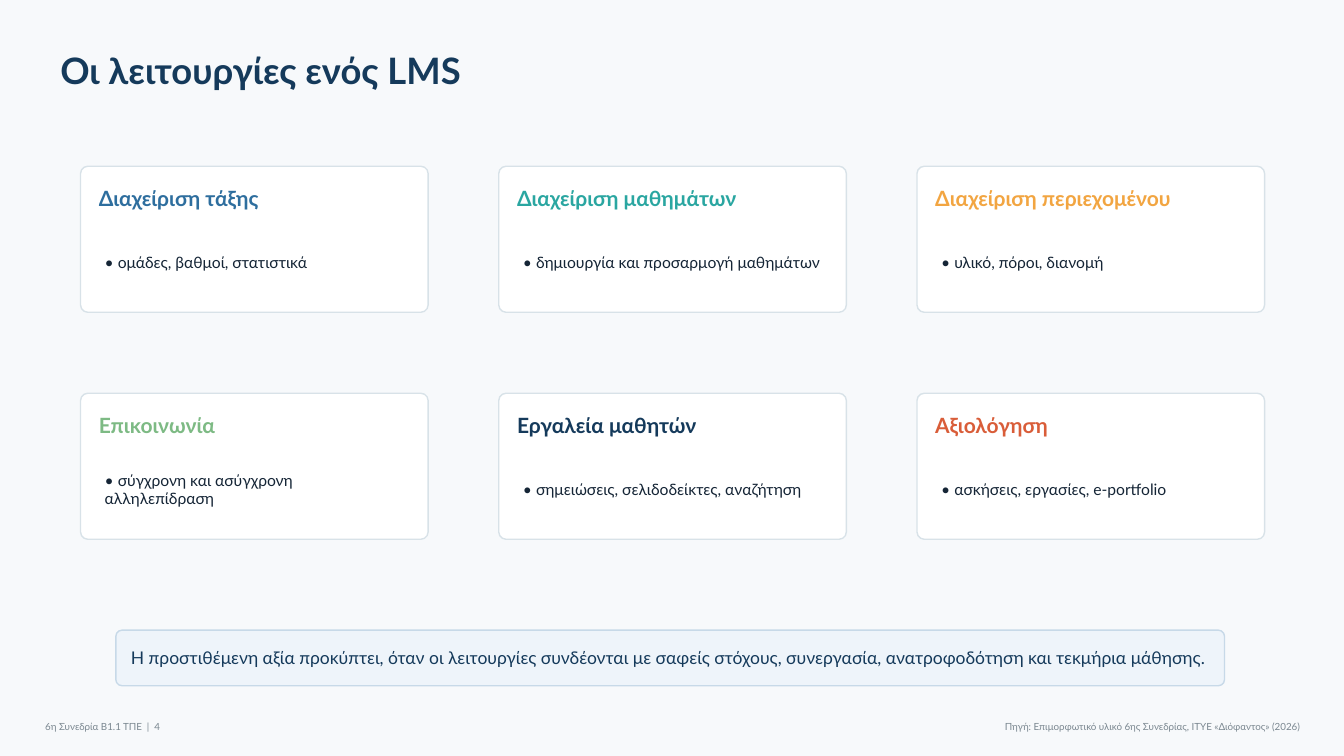
from pptx import Presentation
from pptx.dml.color import RGBColor
from pptx.enum import shapes, text
from pptx.util import Cm, Pt

NAVY, INK, GREY = "153A5B", "152536", "7A8790"
CARDS = [
    ("Διαχείριση τάξης", "2E6E9E", "ομάδες, βαθμοί, στατιστικά"),
    ("Διαχείριση μαθημάτων", "2AA6A1", "δημιουργία και προσαρμογή μαθημάτων"),
    ("Διαχείριση περιεχομένου", "F2A541", "υλικό, πόροι, διανομή"),
    ("Επικοινωνία", "7DBA84", "σύγχρονη και ασύγχρονη αλληλεπίδραση"),
    ("Εργαλεία μαθητών", NAVY, "σημειώσεις, σελιδοδείκτες, αναζήτηση"),
    ("Αξιολόγηση", "D95D39", "ασκήσεις, εργασίες, e-portfolio"),
]
COLUMNS = 3
CARD_LEFT, CARD_TOP = 2.03, 4.19
CARD_WIDTH, CARD_HEIGHT = 8.76, 3.68
COLUMN_STEP, ROW_STEP = 10.54, 5.72
FOOTER_TOP, FOOTER_HEIGHT = 18.08, 0.46

presentation = Presentation()
presentation.slide_width, presentation.slide_height = Cm(33.87), Cm(19.05)
slide = presentation.slides.add_slide(presentation.slide_layouts[6])
slide.background.fill.solid()
slide.background.fill.fore_color.rgb = RGBColor.from_string("F7F9FB")


def add_panel(left, top, width, height, rounding, fill, line):
    shape = slide.shapes.add_shape(
        shapes.MSO_SHAPE.ROUNDED_RECTANGLE, Cm(left), Cm(top), Cm(width), Cm(height))
    shape.adjustments[0] = rounding
    shape.shadow.inherit = False
    shape.fill.solid()
    shape.fill.fore_color.rgb = RGBColor.from_string(fill)
    shape.line.color.rgb = RGBColor.from_string(line)
    shape.line.width = Pt(1)


def add_text(left, top, width, height, words, size, color, bold=False,
             align=text.PP_ALIGN.LEFT):
    frame = slide.shapes.add_textbox(Cm(left), Cm(top), Cm(width), Cm(height)).text_frame
    frame.word_wrap = True
    frame.vertical_anchor = text.MSO_ANCHOR.MIDDLE
    frame.margin_left = frame.margin_right = frame.margin_top = frame.margin_bottom = 0
    paragraph = frame.paragraphs[0]
    paragraph.alignment = align
    run = paragraph.add_run()
    run.text = words
    run.font.name = "Lato"
    run.font.size = Pt(size)
    run.font.bold = bold
    run.font.color.rgb = RGBColor.from_string(color)


add_text(1.52, 1.07, 17.02, 1.4, "Οι λειτουργίες ενός LMS", 26, NAVY, bold=True)

for index, (heading, color, details) in enumerate(CARDS):
    row, column = divmod(index, COLUMNS)
    left = CARD_LEFT + column * COLUMN_STEP
    top = CARD_TOP + row * ROW_STEP
    add_panel(left, top, CARD_WIDTH, CARD_HEIGHT, 0.05, "FFFFFF", "D8E2E8")
    add_text(left + 0.46, top + 0.41, 7.85, 0.76, heading, 15, color, bold=True)
    add_text(left + 0.61, top + 1.57, 7.54, 1.7, f"• {details}", 11.2, INK)

add_panel(2.92, 15.88, 27.94, 1.4, 0.11, "EEF4FA", "C7D9E8")
add_text(3.3, 16.23, 27.18, 0.69,
         "Η προστιθέμενη αξία προκύπτει, όταν οι λειτουργίες συνδέονται με σαφείς στόχους, "
         "συνεργασία, ανατροφοδότηση και τεκμήρια μάθησης.", 12.5, NAVY)

add_text(1.14, FOOTER_TOP, 19.05, FOOTER_HEIGHT, "6η Συνεδρία Β1.1 ΤΠΕ  |  4", 7, GREY)
add_text(20.57, FOOTER_TOP, 12.19, FOOTER_HEIGHT,
         "Πηγή: Επιμορφωτικό υλικό 6ης Συνεδρίας, ΙΤΥΕ «Διόφαντος» (2026)", 7, GREY,
         align=text.PP_ALIGN.RIGHT)

presentation.save("out.pptx")
